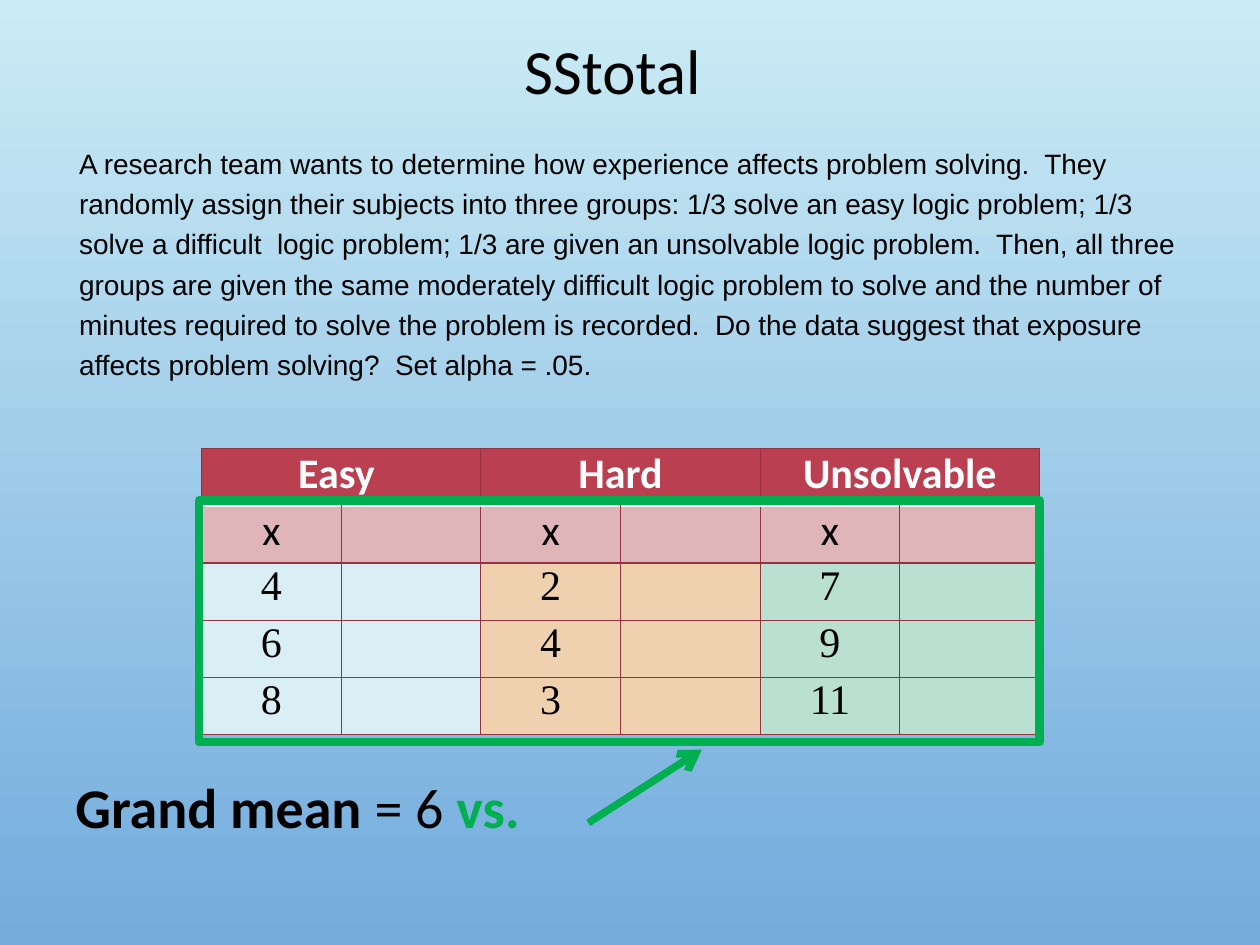
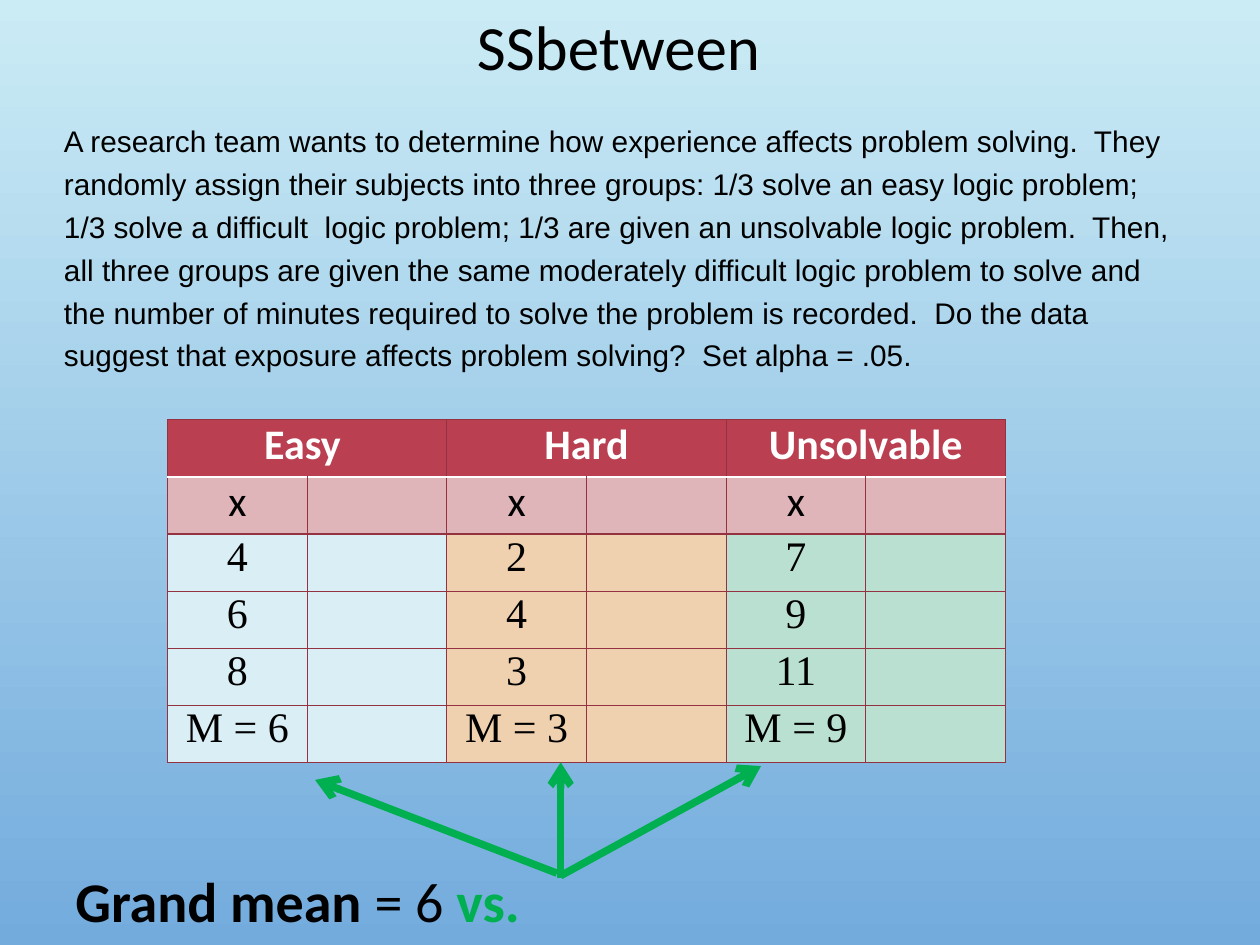
from lxml import etree
from pptx import Presentation
from pptx.dml.color import RGBColor
from pptx.enum.shapes import MSO_CONNECTOR, MSO_SHAPE
from pptx.enum.text import MSO_ANCHOR, PP_ALIGN
from pptx.oxml.ns import qn
from pptx.util import Inches, Pt

CENTER = PP_ALIGN.CENTER
MIDDLE = MSO_ANCHOR.MIDDLE
LINE = MSO_CONNECTOR.STRAIGHT
RECT = MSO_SHAPE.RECTANGLE
TITLE_ONLY = 5

# Shared look
BLACK, WHITE, GREEN = "000000", "FFFFFF", "00B050"
SKY, BLUE = "CBECF5", "73ABDD"
HEAD, SUB, EDGE = "BA3F51", "DFB5BA", "953241"
TINTS = ["DAEEF6", "EFD1AF", "BAE0D2"]
COL_W, ROW_H = 6.65 / 6, 2.27 / 5

# Shared content
STORY = (
    "A research team wants to determine how experience affects problem "
    "solving.  They randomly assign their subjects into three groups: 1/3 "
    "solve an easy logic problem; 1/3 solve a difficult  logic problem; 1/3 "
    "are given an unsolvable logic problem.  Then, all three groups are given "
    "the same moderately difficult logic problem to solve and the number of "
    "minutes required to solve the problem is recorded.  Do the data suggest "
    "that exposure affects problem solving?  Set alpha = .05."
)
GROUPS = ["Easy ", "Hard", "Unsolvable"]
SCORES = [["4", "2", "7"], ["6", "4", "9"], ["8", "3", "11"]]
MEANS = ["M = 6", "M = 3", "M = 9"]


def rgb(code):
    return RGBColor.from_string(code)


def style(font, size, color=BLACK, name="Calibri", bold=False):
    font.size, font.name, font.bold = Pt(size), name, bold
    font.color.rgb = rgb(color)


def place(shape, box):
    shape.left, shape.top, shape.width, shape.height = map(Inches, box)


def add_slide(prs, title, box):
    slide = prs.slides.add_slide(prs.slide_layouts[TITLE_ONLY])
    fill = slide.background.fill
    fill.gradient()
    fill.gradient_angle = 270
    for stop, color in zip(fill.gradient_stops, (SKY, BLUE)):
        stop.color.rgb = rgb(color)
    head = slide.shapes.title
    place(head, box)
    head.text_frame.text = title
    head.text_frame.vertical_anchor = MIDDLE
    para = head.text_frame.paragraphs[0]
    para.alignment, para.line_spacing = CENTER, 0.9
    style(para.font, 36)
    return slide


def add_box(slide, box):
    frame = slide.shapes.add_textbox(*map(Inches, box)).text_frame
    frame.word_wrap = True
    return frame.paragraphs[0]


def add_story(slide, box, size):
    para = add_box(slide, box)
    para.text, para.line_spacing = STORY, 1.2
    style(para.font, size, name="Arial")


def add_mean(slide, box):
    para = add_box(slide, box)
    parts = [("Grand mean ", BLACK, True), ("= 6 ", BLACK, False),
             ("vs.", GREEN, True)]
    for text, color, bold in parts:
        run = para.add_run()
        run.text = text
        style(run.font, 32, color, bold=bold)


def set_edges(cell, top, bottom):
    """Draw the four borders; top and bottom are (colour, points)."""
    side = (EDGE, 0.75)
    props = cell._tc.get_or_add_tcPr()
    edges = zip("LRTB", (side, side, top, bottom))
    for i, (key, (color, width)) in enumerate(edges):
        line = etree.Element(qn("a:ln" + key), w=str(Pt(width)))
        fill = etree.SubElement(line, qn("a:solidFill"))
        etree.SubElement(fill, qn("a:srgbClr"), val=color)
        props.insert(i, line)


def add_scores(slide, left, top, data):
    rows = [GROUPS, ["x"] * 3] + data
    count = len(rows)
    size = (left, top, 6 * COL_W, count * ROW_H)
    table = slide.shapes.add_table(count, 6, *map(Inches, size)).table
    thin, rule = (EDGE, 0.75), (WHITE, 1.25)
    for r, row in enumerate(rows):
        table.rows[r].height = Inches(ROW_H)
        for c in range(6):
            cell = table.cell(r, c)
            cell.margin_left = cell.margin_right = Inches(0.07)
            cell.margin_top = cell.margin_bottom = 0
            cell.fill.solid()
            tint = (HEAD, SUB)[r] if r < 2 else TINTS[c // 2]
            cell.fill.fore_color.rgb = rgb(tint)
            set_edges(cell, rule if r == 1 else thin,
                      rule if r == 0 else thin)
            if c % 2 == 0:
                cell.text = row[c // 2]
                para = cell.text_frame.paragraphs[0]
                para.alignment = CENTER
                style(para.font, 24, WHITE if r == 0 else BLACK,
                      "Calibri" if r < 2 else "Times New Roman", r == 0)
    # Each group name spans its two columns
    for c in range(0, 6, 2):
        table.cell(0, c).merge(table.cell(0, c + 1))


def add_frame(slide, box):
    frame = slide.shapes.add_shape(RECT, *map(Inches, box))
    frame.shadow.inherit = False
    frame.fill.background()
    frame.line.color.rgb = rgb(GREEN)
    frame.line.width = Pt(5)


def add_arrow(slide, start, end):
    arrow = slide.shapes.add_connector(LINE, *map(Inches, start + end))
    arrow.line.color.rgb = rgb(GREEN)
    arrow.line.width = Pt(4.25)
    props = arrow._element.spPr
    etree.SubElement(props.find(qn("a:ln")), qn("a:tailEnd"), type="arrow")
    etree.SubElement(props, qn("a:effectLst"))


def main():
    prs = Presentation()
    prs.slide_width, prs.slide_height = Inches(10), Inches(7.5)

    # Total: every score against the grand mean
    slide = add_slide(prs, "SStotal", (0.61, 0.19, 8.5, 0.79))
    add_scores(slide, 1.6, 3.56, SCORES)
    add_story(slide, (0.53, 1.06, 9, 1.92), 16)
    add_mean(slide, (0.5, 6.08, 9, 1))
    add_frame(slide, (1.58, 3.97, 6.67, 1.92))
    add_arrow(slide, (4.67, 6.53), (5.57, 5.95))

    # Between: each group mean against the grand mean
    slide = add_slide(prs, "SSbetween", (0.66, -0.06, 8.5, 0.92))
    add_story(slide, (0.41, 0.87, 9, 3.6), 17)
    add_scores(slide, 1.33, 3.33, SCORES + [MEANS])
    add_mean(slide, (0.5, 6.83, 9, 0.68))
    add_arrow(slide, (4.42, 6.93), (2.5, 6.19))
    add_arrow(slide, (4.45, 6.95), (6.04, 6.08))
    add_arrow(slide, (4.45, 6.97), (4.45, 6.05))

    prs.save("out.pptx")


if __name__ == "__main__":
    main()
